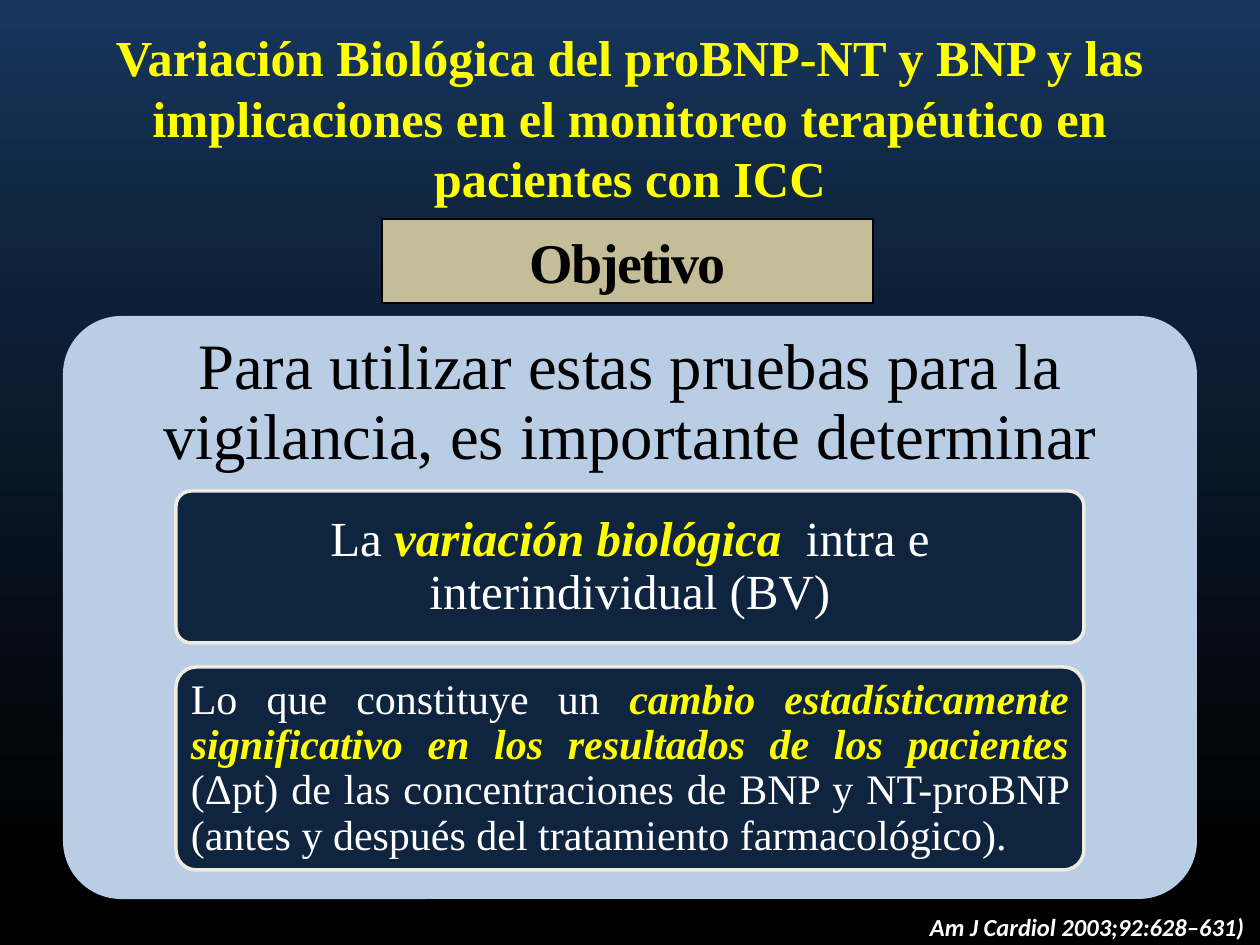
from copy import deepcopy

from pptx import Presentation
from pptx.dml.color import RGBColor
from pptx.enum.shapes import MSO_SHAPE as Shape
from pptx.enum.text import MSO_ANCHOR as Anchor, PP_ALIGN as Align
from pptx.oxml.ns import qn
from pptx.util import Emu, Pt

PX = 914400 / 126
SERIF, SANS = "Times New Roman", "Calibri"
COLORS = {
    "sky": "17375E", "navy": "0F243E", "black": "000000", "white": "FFFFFF",
    "yellow": "FFFF00", "tan": "C4BD97", "panel": "B9CDE5", "cream": "EEECE1",
}


def px(n):
    return Emu(round(n * PX))


def rgb(name):
    return RGBColor.from_string(COLORS[name])


class Deck:
    def __init__(self, width, height):
        self.prs = Presentation()
        self.prs.slide_width, self.prs.slide_height = px(width), px(height)
        self.s = self.prs.slides.add_slide(self.prs.slide_layouts[6])

    def background(self, stops):
        """Fill the slide from top to bottom with (position, colour) stops."""
        fill = self.s.background.fill
        fill.gradient()
        fill.gradient_angle = 270
        gs_list = next(self.s.element.iter(qn("a:gsLst")))
        while len(gs_list) < len(stops):
            gs_list.append(deepcopy(gs_list[0]))
        for stop, (position, color) in zip(fill.gradient_stops, stops):
            stop.position = position
            stop.color.rgb = rgb(color)

    def shape(self, kind, box, fill, line=None, weight=0, radius=None):
        sp = self.s.shapes.add_shape(kind, *map(px, box))
        sp.shadow.inherit = False
        sp.fill.solid()
        sp.fill.fore_color.rgb = rgb(fill)
        if line:
            sp.line.color.rgb = rgb(line)
            sp.line.width = Pt(weight)
        else:
            sp.line.fill.background()
        if radius is not None:
            sp.adjustments[0] = radius
        return sp

    def textbox(self, box):
        return self.s.shapes.add_textbox(*map(px, box))

    def text(self, sp, runs, size, font=SERIF, align=Align.CENTER, anchor=Anchor.MIDDLE,
             inset=(13, 6), spacing=None, wrap=True, tracking=None):
        """Write (text, colour, bold, italic) runs as one paragraph."""
        tf = sp.text_frame
        tf.word_wrap = wrap
        tf.vertical_anchor = anchor
        tf.margin_left = tf.margin_right = px(inset[0])
        tf.margin_top = tf.margin_bottom = px(inset[1])
        p = tf.paragraphs[0]
        p.alignment = align
        if spacing:
            p.line_spacing = spacing
        for content, color, bold, italic in runs:
            r = p.add_run()
            r.text = content
            r.font.name, r.font.size = font, Pt(size)
            r.font.bold, r.font.italic = bold, italic
            r.font.color.rgb = rgb(color)
            if tracking:
                r.font._element.set("spc", str(tracking))

    def card(self, box, runs, size, align):
        sp = self.shape(Shape.ROUNDED_RECTANGLE, box, "navy", "cream", 2, 0.1)
        self.text(sp, runs, size, align=align, inset=(9, 7), spacing=0.9)


def main():
    deck = Deck(1260, 945)
    deck.background([(0, "sky"), (0.24, "navy"), (0.91, "black")])

    deck.text(deck.textbox((63, 38, 1134, 158)), [
        ("Variación Biológica del proBNP-NT y BNP y las implicaciones en el "
         "monitoreo terapéutico en pacientes con ICC", "yellow", True, False)], 28.8)

    heading = deck.shape(Shape.RECTANGLE, (382, 219, 491, 84), "tan", "black", 0.75)
    deck.text(heading, [("Objetivo", "black", True, False)], 32, tracking=-100)

    deck.text(deck.textbox((917, 906, 343, 43)),
              [("Am J Cardiol 2003;92:628–631)", "white", True, True)], 14,
              font=SANS, align=Align.LEFT, anchor=Anchor.TOP, wrap=False)

    deck.shape(Shape.ROUNDED_RECTANGLE, (63, 316, 1134, 583), "panel", radius=0.1)
    deck.text(deck.textbox((63, 316, 1134, 175)), [
        ("Para utilizar estas pruebas para la vigilancia, es importante determinar",
         "black", False, False)], 37, inset=(19, 19), spacing=0.9)

    deck.card((176, 491, 908, 152), [
        ("La ", "white", False, False),
        ("variación biológica  ", "yellow", True, True),
        ("intra e interindividual (BV)", "white", False, False)], 28, Align.CENTER)
    deck.card((176, 667, 908, 203), [
        ("Lo que constituye un ", "white", False, False),
        ("cambio estadísticamente significativo en los resultados de los pacientes ",
         "yellow", True, True),
        ("(Δpt) de las concentraciones de BNP y NT-proBNP (antes y después del "
         "tratamiento farmacológico).", "white", False, False)], 24, Align.JUSTIFY)

    deck.prs.save("out.pptx")


if __name__ == "__main__":
    main()
